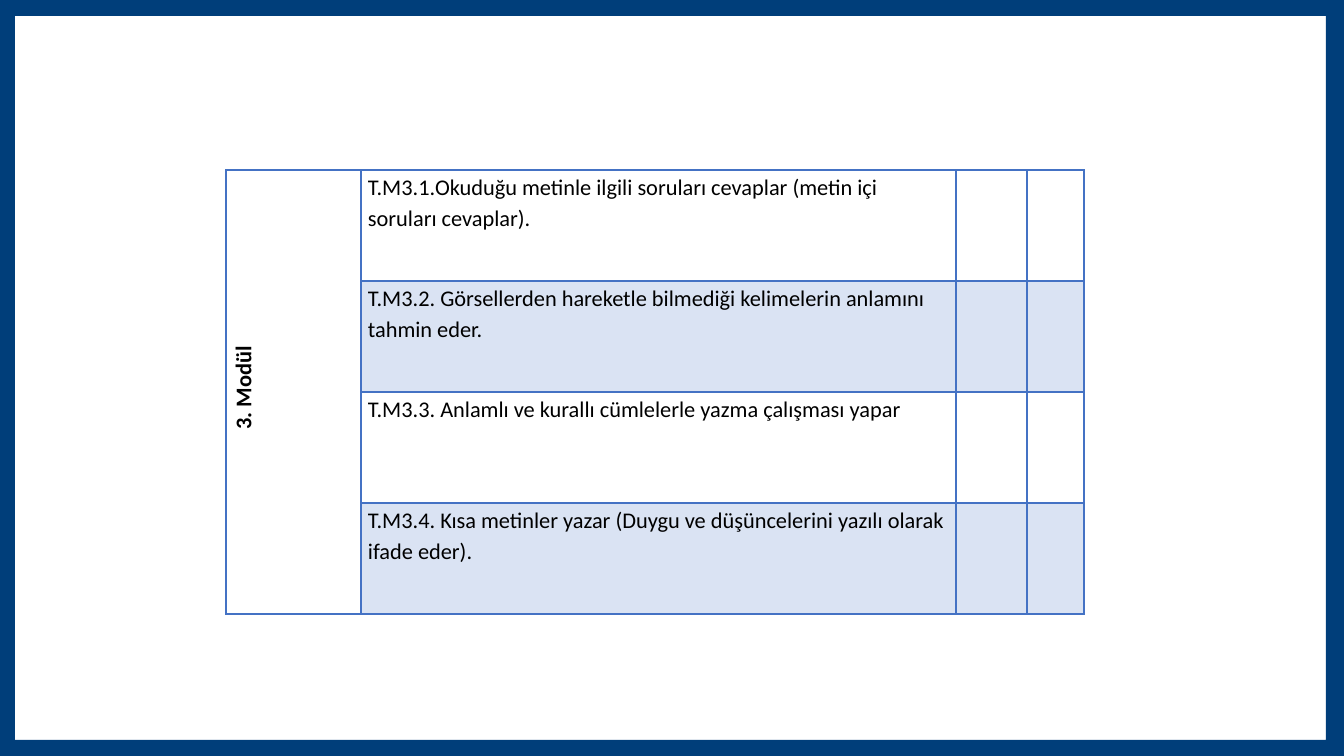
from lxml import etree
from pptx import Presentation
from pptx.dml.color import RGBColor
from pptx.enum.text import MSO_ANCHOR, PP_ALIGN
from pptx.oxml.ns import qn
from pptx.util import Pt

CENTER = PP_ALIGN.CENTER
MIDDLE = MSO_ANCHOR.MIDDLE

MODULE = "3. Modül"
OUTCOMES = [
    "T.M3.1.Okuduğu metinle ilgili soruları cevaplar (metin içi soruları cevaplar).",
    "T.M3.2. Görsellerden hareketle bilmediği kelimelerin anlamını tahmin eder.",
    "T.M3.3. Anlamlı ve kurallı cümlelerle yazma çalışması yapar",
    "T.M3.4. Kısa metinler yazar (Duygu ve düşüncelerini yazılı olarak ifade eder).",
]
COLORS = {"frame": "003E7A", "border": "4472C4", "band": "DAE3F3", "text": "000000"}
FONT = {"name": "Calibri", "size": Pt(16)}

SLIDE_W, SLIDE_H = 1344, 756
EMU_PER_PX = 12192000 / SLIDE_W
TABLE_LEFT, TABLE_TOP = 226, 170
COLUMN_WIDTHS = [135, 595, 71, 57]
ROW_HEIGHT = 111
CELL_INSET = 7
MODULE_INDENT = 8
FRAME_OUTER = [(0, 0), (SLIDE_W, 0), (SLIDE_W, SLIDE_H), (0, SLIDE_H)]
FRAME_INNER = [(15, 16), (15, 740), (1326, 740), (1326, 16)]


def px(length):
    return round(length * EMU_PER_PX)


def color(name):
    return RGBColor.from_string(COLORS[name])


def set_borders(cell, bottom_width):
    properties = cell._tc.get_or_add_tcPr()
    widths = {"lnL": 1, "lnR": 1, "lnT": 1, "lnB": bottom_width}
    for position, (side, width) in enumerate(widths.items()):
        line = etree.Element(qn(f"a:{side}"), w=str(Pt(width)))
        solid = etree.SubElement(line, qn("a:solidFill"))
        etree.SubElement(solid, qn("a:srgbClr"), val=COLORS["border"])
        properties.insert(position, line)


def write(cell, text, bold):
    paragraph = cell.text_frame.paragraphs[0]
    paragraph.line_spacing = 1.15
    run = paragraph.add_run()
    run.text = text
    for attribute, value in {**FONT, "bold": bold}.items():
        setattr(run.font, attribute, value)
    run.font.color.rgb = color("text")
    return paragraph


def add_outcome_table(slide):
    row_count = len(OUTCOMES)
    table = slide.shapes.add_table(
        row_count, len(COLUMN_WIDTHS), px(TABLE_LEFT), px(TABLE_TOP),
        px(sum(COLUMN_WIDTHS)), px(ROW_HEIGHT * row_count)).table
    table.first_row = table.horz_banding = False
    for column, width in zip(table.columns, COLUMN_WIDTHS):
        column.width = px(width)

    insets = {"margin_left": px(CELL_INSET), "margin_right": px(CELL_INSET),
              "margin_top": 0, "margin_bottom": 0}
    for row_index, outcome in enumerate(OUTCOMES):
        table.rows[row_index].height = px(ROW_HEIGHT)
        for column_index in range(len(COLUMN_WIDTHS)):
            cell = table.cell(row_index, column_index)
            for attribute, value in insets.items():
                setattr(cell, attribute, value)
            if column_index and row_index % 2:
                cell.fill.solid()
                cell.fill.fore_color.rgb = color("band")
            else:
                cell.fill.background()
            set_borders(cell, 2 if row_index == 0 or column_index == 0 else 1)
        write(table.cell(row_index, 1), outcome, bold=False)

    module = table.cell(0, 0)
    module.merge(table.cell(row_count - 1, 0))
    module.vertical_anchor = MIDDLE
    module._tc.get_or_add_tcPr().set("vert", "vert270")
    heading = write(module, MODULE, bold=True)
    heading.alignment = CENTER
    heading._p.get_or_add_pPr().set("marL", str(px(MODULE_INDENT)))


def add_frame(slide):
    builder = slide.shapes.build_freeform(*FRAME_OUTER[0], scale=EMU_PER_PX)
    builder.add_line_segments(FRAME_OUTER[1:], close=True)
    builder.move_to(*FRAME_INNER[0])
    builder.add_line_segments(FRAME_INNER[1:], close=True)
    frame = builder.convert_to_shape()
    frame.shadow.inherit = False
    frame.fill.solid()
    frame.fill.fore_color.rgb = color("frame")
    frame.line.fill.background()


def main():
    presentation = Presentation()
    presentation.slide_width = px(SLIDE_W)
    presentation.slide_height = px(SLIDE_H)
    slide = presentation.slides.add_slide(presentation.slide_layouts[6])
    add_outcome_table(slide)
    add_frame(slide)
    presentation.save("out.pptx")


if __name__ == "__main__":
    main()
